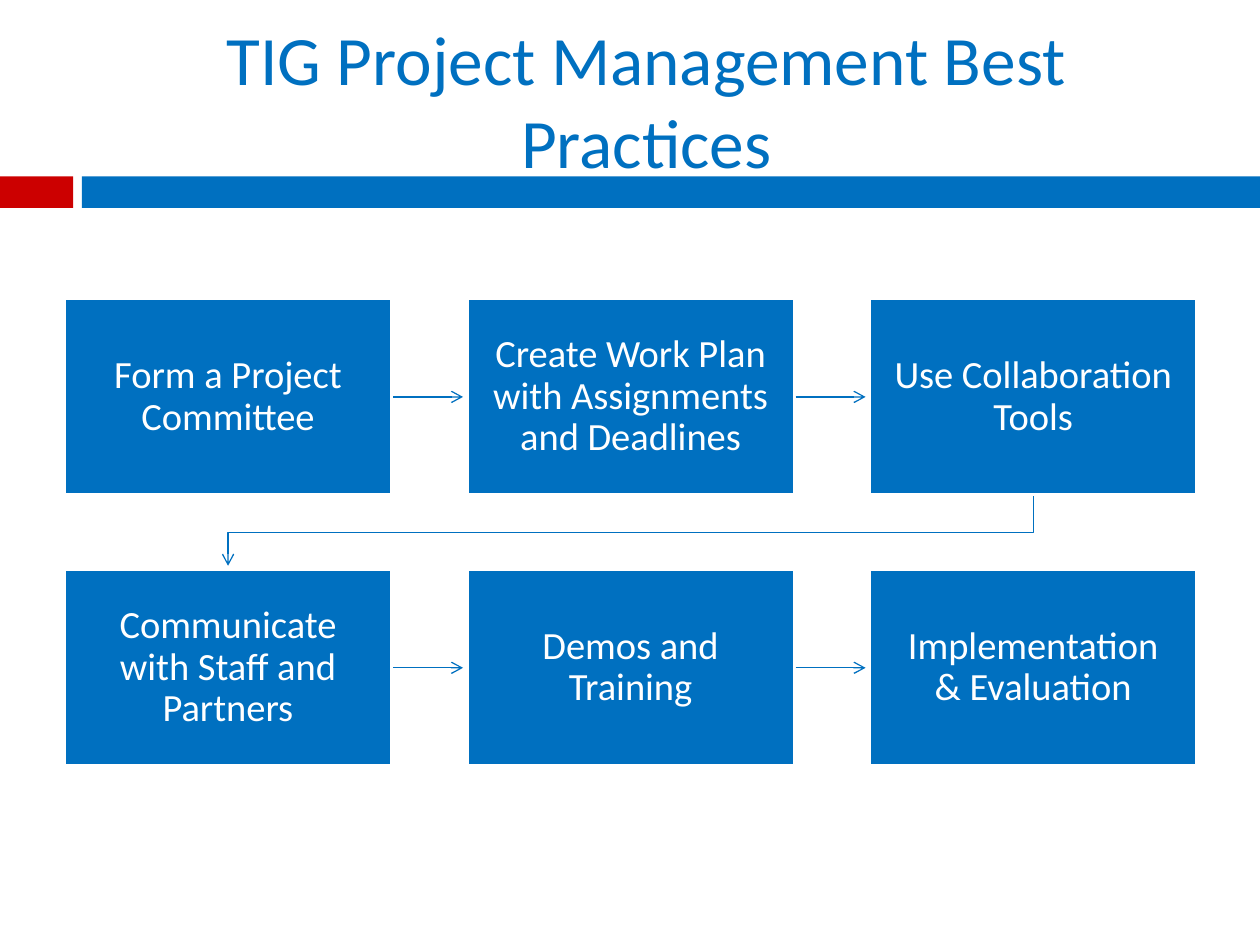
from lxml.etree import SubElement
from pptx import Presentation
from pptx.dml.color import RGBColor
from pptx.enum.shapes import MSO_CONNECTOR, MSO_SHAPE
from pptx.enum.text import MSO_ANCHOR, PP_ALIGN
from pptx.oxml.ns import qn
from pptx.util import Inches, Pt

BLUE, RED, WHITE = "0070C0", "CC0000", "FFFFFF"
FONT = "Calibri"
STEPS = [
    ["Form a Project Committee",
     "Create Work Plan with Assignments and Deadlines",
     "Use Collaboration Tools"],
    ["Communicate with Staff and Partners",
     "Demos and Training",
     "Implementation & Evaluation"],
]


def color(hex_text):
    return RGBColor.from_string(hex_text)


def style_text(para, size, hex_text):
    para.alignment = PP_ALIGN.CENTER
    for span in para.runs:
        span.font.name = FONT
        span.font.size = Pt(size)
        span.font.color.rgb = color(hex_text)


def add_block(page, left, top, width, height, fill):
    block = page.shapes.add_shape(
        MSO_SHAPE.RECTANGLE, *map(Inches, (left, top, width, height)))
    block.shadow.inherit = False
    block.fill.solid()
    block.fill.fore_color.rgb = color(fill)
    block.line.fill.background()
    return block


def style_arrow(arrow):
    arrow.line.color.rgb = color(BLUE)
    arrow.line.width = Pt(0.75)
    properties = arrow._element.spPr
    SubElement(properties.find(qn("a:ln")), qn("a:tailEnd"), type="arrow")
    if properties.find(qn("a:effectLst")) is None:
        SubElement(properties, qn("a:effectLst"))


def add_header(page, width, bar_top, bar_height):
    # Red and blue bar below the title
    red_width, gap = 0.58, 0.07
    blue_left = red_width + gap
    add_block(page, 0, bar_top, red_width, bar_height, RED)
    add_block(page, blue_left, bar_top, width - blue_left, bar_height, BLUE)

    # Title
    title = page.shapes.title
    title.left, title.top, title.width, title.height = map(
        Inches, (0.67, 0.25, 8.92, 1.08))
    frame = title.text_frame
    frame.text = "TIG Project Management Best Practices"
    frame.word_wrap = True
    frame.vertical_anchor = MSO_ANCHOR.MIDDLE
    style_text(frame.paragraphs[0], 39.6, BLUE)


def add_step(page, left, top, width, height, text):
    step = add_block(page, left, top, width, height, BLUE)
    step.line.color.rgb = color(WHITE)
    step.line.width = Pt(2)
    frame = step.text_frame
    frame.text = text
    frame.word_wrap = True
    frame.vertical_anchor = MSO_ANCHOR.MIDDLE
    frame.margin_left = frame.margin_right = Inches(0.17)
    frame.margin_top = frame.margin_bottom = Inches(0.17)
    para = frame.paragraphs[0]
    para.line_spacing = 0.9
    style_text(para, 22, WHITE)


def add_flow(page, left, top, width, height):
    # Equal steps share the area, with equal gaps between them
    columns, rows = len(STEPS[0]), len(STEPS)
    step_width, step_height = 2.6, 1.56
    column_pitch = (width - step_width) / (columns - 1)
    row_pitch = (height - step_height) / (rows - 1)
    column_gap = column_pitch - step_width
    clearance = 0.03

    for row, texts in enumerate(STEPS):
        step_top = top + row * row_pitch
        middle = step_top + step_height / 2
        for column, text in enumerate(texts):
            step_left = left + column * column_pitch
            add_step(page, step_left, step_top, step_width, step_height, text)
            if column < columns - 1:
                start = step_left + step_width
                end = start + column_gap - clearance
                style_arrow(page.shapes.add_connector(
                    MSO_CONNECTOR.STRAIGHT,
                    *map(Inches, (start + 0.01, middle, end, middle))))

        # Bent arrow from the end of a row to the start of the next
        if row < rows - 1:
            first = left + step_width / 2
            last = first + (columns - 1) * column_pitch
            bottom = step_top + step_height
            next_top = step_top + row_pitch
            turn = (bottom + next_top) / 2
            builder = page.shapes.build_freeform(
                Inches(last), Inches(bottom + 0.01))
            corners = [(last, turn), (first, turn),
                       (first, next_top - clearance)]
            builder.add_line_segments(
                [(Inches(x), Inches(y)) for x, y in corners], close=False)
            bent = builder.convert_to_shape()
            bent.fill.background()
            style_arrow(bent)


def main():
    deck = Presentation()
    deck.slide_width, deck.slide_height = Inches(10), Inches(7.5)
    page = deck.slides.add_slide(deck.slide_layouts[5])
    add_header(page, 10, 1.4, 0.25)
    add_flow(page, 0.51, 2.37, 8.99, 3.71)
    deck.save("out.pptx")


if __name__ == "__main__":
    main()
